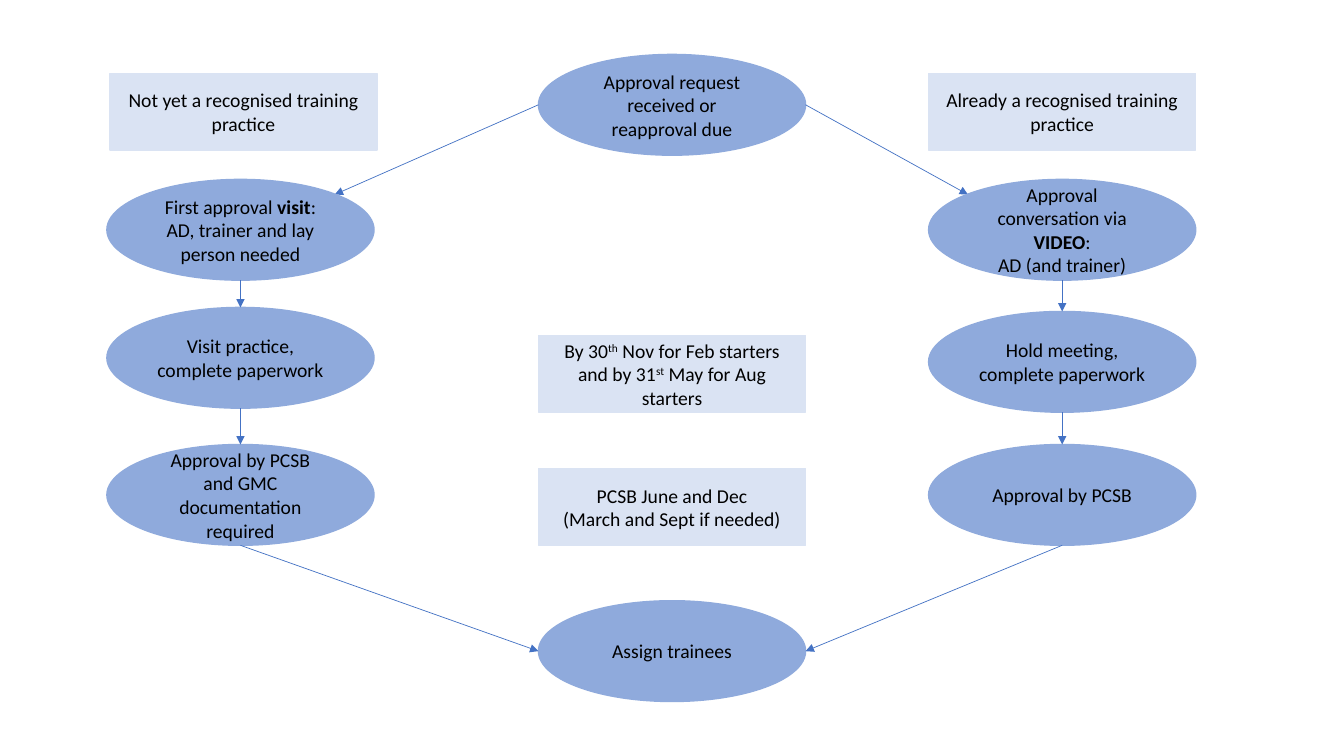
import pptx
import pptx.util
import pptx.dml.color
import pptx.enum.shapes
import pptx.enum.text
import pptx.oxml.ns
import lxml.etree

Inches = pptx.util.Inches
Pt = pptx.util.Pt
Preset = pptx.enum.shapes.MSO_SHAPE

THEME = {
    "step": pptx.dml.color.RGBColor.from_string("8FAADC"),
    "note": pptx.dml.color.RGBColor.from_string("DAE3F3"),
    "arrow": pptx.dml.color.RGBColor.from_string("4472C4"),
    "text": pptx.dml.color.RGBColor.from_string("000000"),
    "font": "Calibri",
    "size": Pt(14),
    "outline": Pt(1),
    "arrow_width": Pt(0.5),
}
WIDTH, STEP_HEIGHT, NOTE_HEIGHT = 2.65, 1, 0.76
LEFT, MIDDLE, RIGHT = 1.06, 5.34, 9.21

deck = pptx.Presentation()
deck.slide_width = Inches(13.33)
deck.slide_height = Inches(7.5)
flowchart = deck.slides.add_slide(deck.slide_layouts[6])


def add_box(text, *, left, top, kind="step", emphasis="bold"):
    preset, height = (Preset.OVAL, STEP_HEIGHT) if kind == "step" else (Preset.RECTANGLE, NOTE_HEIGHT)
    box = flowchart.shapes.add_shape(preset, Inches(left), Inches(top), Inches(WIDTH), Inches(height))
    box.shadow.inherit = False
    box.fill.solid()
    box.fill.fore_color.rgb = THEME[kind]
    box.line.color.rgb = THEME[kind]
    box.line.width = THEME["outline"]
    frame = box.text_frame
    frame.word_wrap = True
    frame.vertical_anchor = pptx.enum.text.MSO_ANCHOR.MIDDLE
    for row, line in enumerate(text.split("\n")):
        paragraph = frame.add_paragraph() if row else frame.paragraphs[0]
        paragraph.alignment = pptx.enum.text.PP_ALIGN.CENTER
        for index, piece in enumerate(line.split("|")):
            run = paragraph.add_run()
            run.text = piece
            run.font.name = THEME["font"]
            run.font.size = THEME["size"]
            run.font.color.rgb = THEME["text"]
            if index % 2 and emphasis == "bold":
                run.font.bold = True
            elif index % 2:
                run.font._element.set("baseline", "30000")
    return box


def add_arrow(start, end):
    arrow = flowchart.shapes.add_connector(
        pptx.enum.shapes.MSO_CONNECTOR.STRAIGHT, *(Inches(value) for value in start + end)
    )
    arrow.line.color.rgb = THEME["arrow"]
    arrow.line.width = THEME["arrow_width"]
    head = lxml.etree.SubElement(arrow.line._get_or_add_ln(), pptx.oxml.ns.qn("a:tailEnd"))
    head.set("type", "triangle")
    lxml.etree.SubElement(arrow._element.spPr, pptx.oxml.ns.qn("a:effectLst"))
    return arrow


request_top, assign_top = 0.54, 5.96
add_box("Approval request received or reapproval due", left=MIDDLE, top=request_top)
add_box("Assign trainees", left=MIDDLE, top=assign_top)

for text, left, top, emphasis in [
    ("Not yet a recognised training practice", 1.09, 0.73, "bold"),
    ("Already a recognised training practice", RIGHT, 0.73, "bold"),
    ("By 30|th| Nov for Feb starters and by 31|st| May for Aug starters", MIDDLE, 3.33, "superscript"),
    ("PCSB June and Dec\n(March and Sept if needed)", MIDDLE, 4.65, "bold"),
]:
    add_box(text, left=left, top=top, kind="note", emphasis=emphasis)

new_practice = [
    ("First approval |visit|:\nAD, trainer and lay person needed", 1.78),
    ("Visit practice, complete paperwork", 3.05),
    ("Approval by PCSB and GMC documentation required", 4.41),
]
known_practice = [
    ("Approval conversation via |VIDEO|:\nAD (and trainer)", 1.78),
    ("Hold meeting, complete paperwork", 3.09),
    ("Approval by PCSB", 4.41),
]
for steps, left, request_side, entry_x in [
    (new_practice, LEFT, MIDDLE, 3.32),
    (known_practice, RIGHT, MIDDLE + WIDTH, 9.6),
]:
    center = left + WIDTH / 2
    add_arrow((request_side, request_top + STEP_HEIGHT / 2), (entry_x, 1.93))
    previous_bottom = None
    for text, top in steps:
        step = add_box(text, left=left, top=top)
        if previous_bottom is not None:
            add_arrow((center, previous_bottom), (center, top)).end_connect(step, 0)
        previous_bottom = top + STEP_HEIGHT
    add_arrow((center, previous_bottom), (request_side, assign_top + STEP_HEIGHT / 2))

deck.save("out.pptx")
